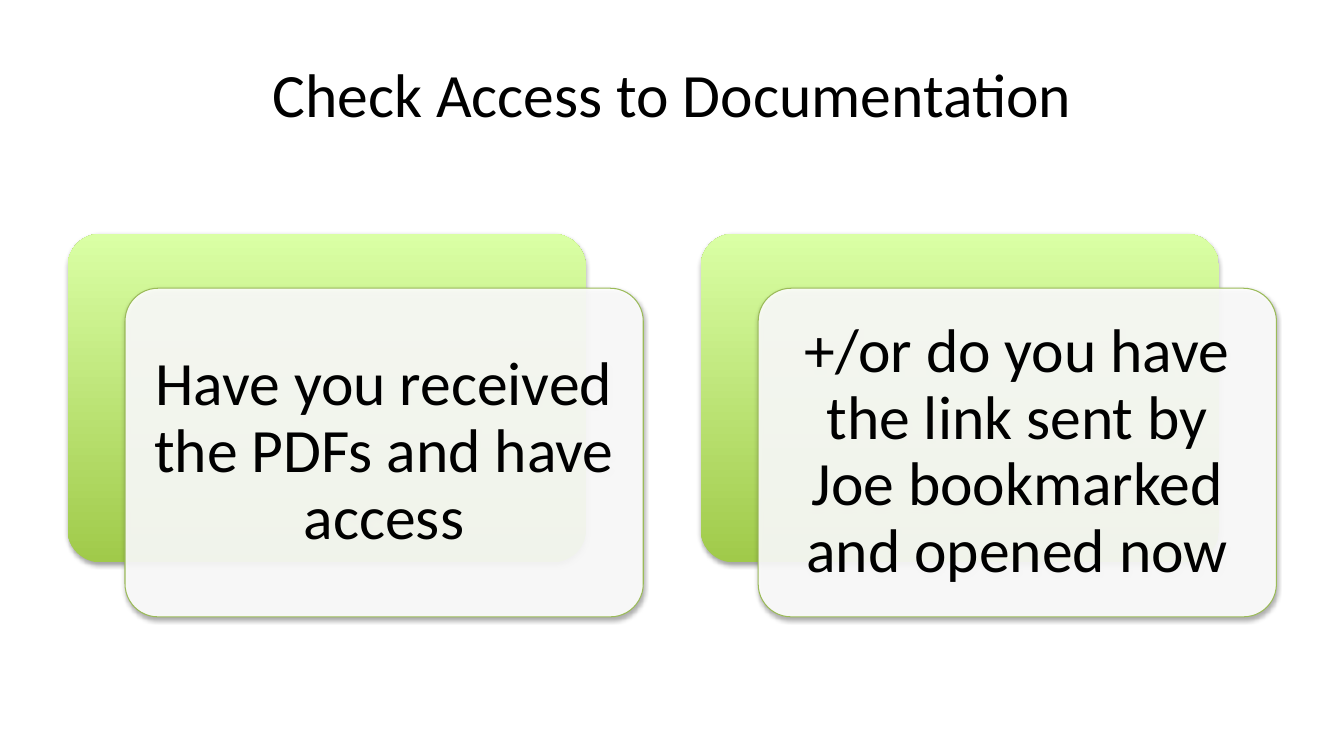
from lxml import etree
from pptx import Presentation
from pptx import util as u
from pptx.dml.color import RGBColor
from pptx.enum import shapes, text
from pptx.oxml.ns import qn

PX = 9144
COLORS = {
    "ink": "000000",
    "card": "FFFFFF",
    "outline": "9BBB59",
    "green_dark": "A0CA4A",
    "green_light": "DAFFA5",
}
CARD_SIZE = (514, 326)
FIRST_LEFT, TOP, STEP = 67, 232, 628
OFFSET_X, OFFSET_Y = 57, 54
QUESTIONS = [
    "Have you received the PDFs and have access",
    "+/or do you have the link sent by Joe bookmarked and opened now",
]


def px(length):
    """Turn a length in px into EMU."""
    return u.Emu(length * PX)


def color(name):
    """Return the named colour."""
    return RGBColor.from_string(COLORS[name])


def write(holder, wording, size=44, ink="ink", spacing=1.0, inset=10):
    """Put centred, formatted text into a shape or placeholder."""
    frame = holder.text_frame
    frame.word_wrap = True
    frame.auto_size = text.MSO_AUTO_SIZE.NONE
    frame.vertical_anchor = text.MSO_ANCHOR.MIDDLE
    frame.margin_left = frame.margin_right = px(inset)
    frame.margin_top = frame.margin_bottom = px(inset)
    frame.text = wording
    paragraph = frame.paragraphs[0]
    paragraph.alignment = text.PP_ALIGN.CENTER
    paragraph.line_spacing = spacing
    font = paragraph.runs[0].font
    font.name, font.size = "Calibri", u.Pt(size)
    font.color.rgb = color(ink)


def add_shadow(card):
    """Give a card a soft shadow below it."""
    card.shadow.inherit = False
    effects = card._element.spPr.find(qn("a:effectLst"))
    shadow = etree.SubElement(effects, qn("a:outerShdw"), blurRad="40000",
                              dist="23000", dir="5400000", rotWithShape="0")
    tone = etree.SubElement(shadow, qn("a:srgbClr"), val=COLORS["ink"])
    etree.SubElement(tone, qn("a:alpha"), val="35000")


def add_card(slide, left, top):
    """Add a rounded card with a shadow."""
    card = slide.shapes.add_shape(shapes.MSO_SHAPE.ROUNDED_RECTANGLE,
                                  px(left), px(top), *map(px, CARD_SIZE))
    card.adjustments[0] = 0.1
    add_shadow(card)
    return card


def add_backdrop(slide, left, top):
    """Add the green gradient card behind a question."""
    backdrop = add_card(slide, left, top)
    backdrop.line.fill.background()
    backdrop.fill.gradient()
    backdrop.fill.gradient_angle = 90
    for stop, name in zip(backdrop.fill.gradient_stops, ("green_dark", "green_light")):
        stop.color.rgb = color(name)


def add_question(slide, left, top, wording):
    """Add the translucent white card that carries a question."""
    question = add_card(slide, left, top)
    question.fill.solid()
    question.fill.fore_color.rgb = color("card")
    tone = question._element.spPr.find(qn("a:solidFill"))[0]
    etree.SubElement(tone, qn("a:alpha"), val="90000")
    question.line.color.rgb = color("outline")
    question.line.width = u.Pt(0.75)
    write(question, wording, spacing=0.9, inset=18)


def main():
    """Build and save the slide."""
    deck = Presentation()
    deck.slide_width, deck.slide_height = px(1333), px(750)
    slide = deck.slides.add_slide(deck.slide_layouts[5])
    title = slide.shapes.title
    title.left, title.top, title.width, title.height = map(px, (67, 30, 1200, 125))
    write(title, "Check Access to Documentation")
    for index, wording in enumerate(QUESTIONS):
        left = FIRST_LEFT + index * STEP
        add_backdrop(slide, left, TOP)
        add_question(slide, left + OFFSET_X, TOP + OFFSET_Y, wording)
    deck.save("out.pptx")


if __name__ == "__main__":
    main()
